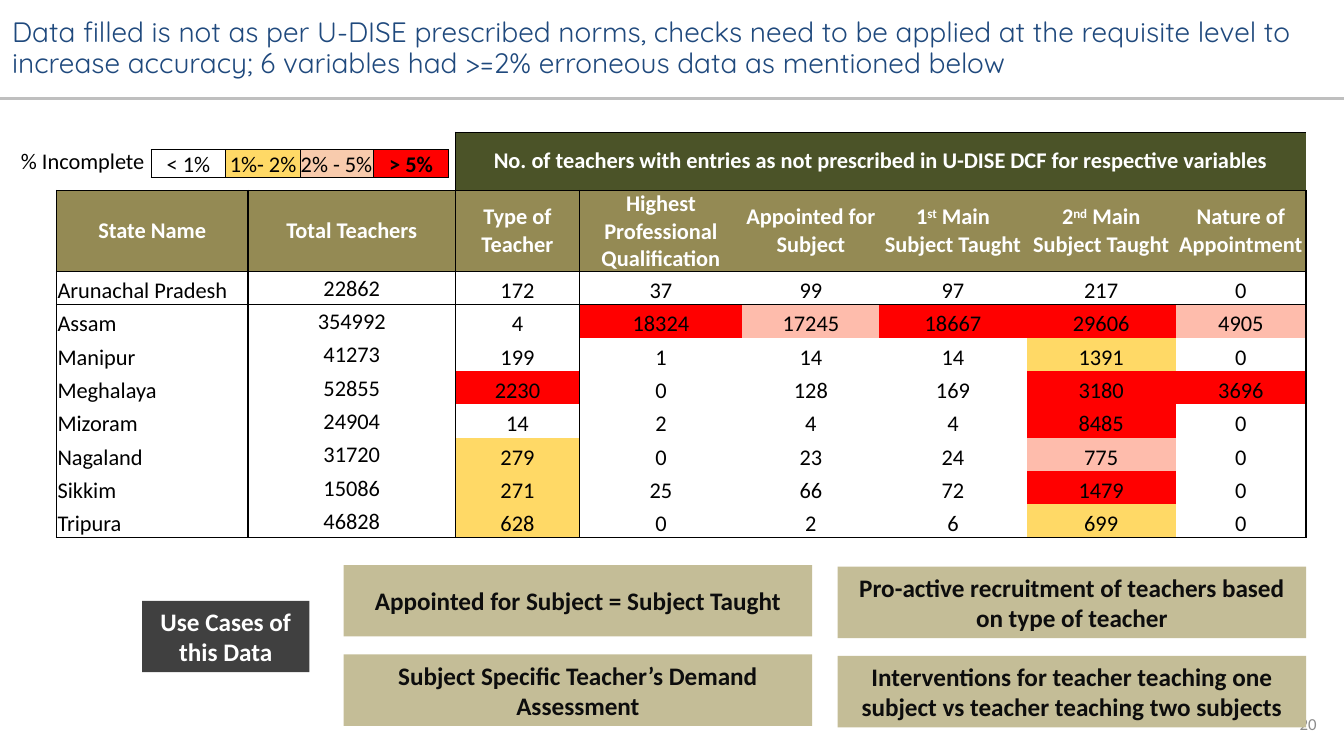
from dataclasses import dataclass

from lxml import etree
from pptx import Presentation
from pptx.dml.color import RGBColor
from pptx.enum.shapes import MSO_CONNECTOR, MSO_SHAPE
from pptx.enum.text import MSO_ANCHOR, MSO_AUTO_SIZE, PP_ALIGN
from pptx.oxml import parse_xml
from pptx.oxml.ns import nsdecls, qn
from pptx.util import Cm, Pt

LEFT, CENTER, RIGHT = PP_ALIGN.LEFT, PP_ALIGN.CENTER, PP_ALIGN.RIGHT
MIDDLE, BOTTOM, TOP = MSO_ANCHOR.MIDDLE, MSO_ANCHOR.BOTTOM, MSO_ANCHOR.TOP
NO_GRID_STYLE = "{2D5ABB26-0587-4C30-8999-92F81FD0307C}"

COLORS = {
    "title": "1F497D", "rule": "BFBFBF", "number": "8C8C8C",
    "black": "000000", "white": "FFFFFF", "ink": "0D0D0D",
    "banner": "4B5328", "header": "948A54", "tan": "C4BD97", "dark": "404040",
    "yellow": "FFD966", "pink": "FEBCAC", "peach": "F8CBAD", "red": "FF0000",
}
SHADES = {".": "white", "y": "yellow", "p": "pink", "r": "red"}


@dataclass
class StateRow:
    name: str
    total: int
    errors: tuple[int, ...]
    shades: str = "......"


@dataclass
class Legend:
    left: float
    entries: tuple[tuple[str, str, bool], ...]


@dataclass
class Box:
    text: str
    left: float
    top: float
    width: float = 11.81
    fill: str = "tan"
    color: str = "ink"


@dataclass
class Block:
    """Cell range with an outline, bounds included."""
    top: int
    bottom: int
    left: int
    right: int


BANNER = "No. of teachers with entries as not prescribed in U-DISE DCF for respective variables"
# A header is a list of runs; every second run is superscript
HEADERS = [
    ["State Name"], ["Total Teachers"], ["Type of Teacher"],
    ["Highest Professional Qualification"], ["Appointed for Subject"],
    ["1", "st", " Main Subject Taught"], ["2", "nd", " Main Subject Taught"],
    ["Nature of Appointment"],
]
STATES = [
    StateRow("Arunachal Pradesh", 22862, (172, 37, 99, 97, 217, 0)),
    StateRow("Assam", 354992, (4, 18324, 17245, 18667, 29606, 4905), ".rprrp"),
    StateRow("Manipur", 41273, (199, 1, 14, 14, 1391, 0), "....y."),
    StateRow("Meghalaya", 52855, (2230, 0, 128, 169, 3180, 3696), "r...rr"),
    StateRow("Mizoram", 24904, (14, 2, 4, 4, 8485, 0), "....r."),
    StateRow("Nagaland", 31720, (279, 0, 23, 24, 775, 0), "y...p."),
    StateRow("Sikkim", 15086, (271, 25, 66, 72, 1479, 0), "y...r."),
    StateRow("Tripura", 46828, (628, 0, 2, 6, 699, 0), "y...y."),
]
COL_WIDTHS = [4.83, 5.23, 3.12, 4.11, 3.45, 3.71, 3.76, 3.28]
ROW_HEIGHTS = [1.47, 1.96] + [0.84] * len(STATES)
BLOCKS = [Block(0, 0, 2, 7)] + [
    Block(top, bottom, left, right)
    for top, bottom in ((1, 1), (2, 9)) for left, right in ((0, 0), (1, 1), (2, 7))
]
LEGENDS = [
    Legend(7.54, (("2% - 5%", "peach", False), ("> 5%", "red", True))),
    Legend(3.81, (("< 1%", "white", False), ("1%- 2%", "yellow", False))),
]
BOXES = [
    Box("Appointed for Subject = Subject Taught", 8.66, 14.24),
    Box("Subject Specific Teacher’s Demand Assessment", 8.66, 16.49),
    Box("Use Cases of this Data", 3.58, 15.14, 4.22, "dark", "white"),
    Box("Pro-active recruitment of teachers based on type of teacher", 21.11, 14.28),
    Box("Interventions for teacher teaching one subject vs teacher teaching two subjects",
        21.11, 16.53),
]


def rgb(name: str) -> RGBColor:
    return RGBColor.from_string(COLORS[name])


def write(tf, runs: list[str], size: float, color: str = "black", bold: bool = False,
          align=CENTER, font: str = "Calibri"):
    p = tf.paragraphs[0]
    p.alignment = align
    for i, text in enumerate(runs):
        r = p.add_run()
        r.text = text
        if i % 2:
            r._r.get_or_add_rPr().set("baseline", "30000")
    p.font.name, p.font.size, p.font.bold = font, Pt(size), bold
    p.font.color.rgb = rgb(color)
    return p


def add_grid(s, left: float, top: float, widths: list[float], heights: list[float],
             blocks: list[Block]):
    """Add an unstyled table and outline its blocks."""
    frame = s.shapes.add_table(len(heights), len(widths), Cm(left), Cm(top),
                               Cm(sum(widths)), Cm(sum(heights)))
    table = frame.table
    table.first_row = table.horz_banding = False
    table._tbl.tblPr.find(qn("a:tableStyleId")).text = NO_GRID_STYLE
    for column, width in zip(table.columns, widths):
        column.width = Cm(width)
    for row, height in zip(table.rows, heights):
        row.height = Cm(height)
    for b in blocks:
        for row in range(b.top, b.bottom + 1):
            for col in range(b.left, b.right + 1):
                tcPr = table.cell(row, col)._tc.get_or_add_tcPr()
                sides = {"L": col == b.left, "R": col == b.right,
                         "T": row == b.top, "B": row == b.bottom}
                for side in (name for name, drawn in sides.items() if drawn):
                    tcPr.append(parse_xml(
                        f'<a:ln{side} {nsdecls("a")} w="12700"><a:solidFill>'
                        f'<a:srgbClr val="{COLORS["black"]}"/></a:solidFill></a:ln{side}>'))
    return table


def fill_cell(cell, runs: list[str], fill: str, color: str = "black", bold: bool = False,
              align=CENTER, anchor=MIDDLE, inset: float = 0.03) -> None:
    cell.margin_left = cell.margin_right = cell.margin_top = Cm(inset)
    cell.margin_bottom = 0
    cell.vertical_anchor = anchor
    cell.fill.solid()
    cell.fill.fore_color.rgb = rgb(fill)
    write(cell.text_frame, runs, 16, color, bold, align)


def add_label(s, text: str, left: float, top: float, width: float, height: float,
              size: float, color: str, align, anchor) -> None:
    tf = s.shapes.add_textbox(Cm(left), Cm(top), Cm(width), Cm(height)).text_frame
    tf.word_wrap = True
    tf.vertical_anchor = anchor
    write(tf, [text], size, color, align=align)


def add_box(s, box: Box) -> None:
    sp = s.shapes.add_shape(MSO_SHAPE.RECTANGLE, Cm(box.left), Cm(box.top),
                            Cm(box.width), Cm(1.8))
    sp.shadow.inherit = False
    sp.fill.solid()
    sp.fill.fore_color.rgb = rgb(box.fill)
    sp.line.fill.background()
    sp.text_frame.word_wrap = True
    sp.text_frame.vertical_anchor = MIDDLE
    write(sp.text_frame, [box.text], 18, box.color, True)


def main() -> None:
    prs = Presentation()
    prs.slide_width, prs.slide_height = Cm(33.87), Cm(19.05)
    s = prs.slides.add_slide(prs.slide_layouts[5])

    # Title and the double rule below it
    title = s.shapes.title
    title.left, title.top, title.width, title.height = Cm(0.05), Cm(0.03), Cm(33.81), Cm(2.41)
    title.fill.solid()
    title.fill.fore_color.rgb = rgb("white")
    tf = title.text_frame
    tf.auto_size = MSO_AUTO_SIZE.NONE
    tf.word_wrap = True
    tf.vertical_anchor = MIDDLE
    p = write(tf, ["Data filled is not as per U-DISE prescribed norms, checks need to be applied "
                   "at the requisite level to increase accuracy; 6 variables had >=2% erroneous "
                   "data as mentioned below"], 20, "title", align=LEFT, font="Quicksand")
    p.line_spacing = 0.9
    for y in (2.46, 2.49):
        rule = s.shapes.add_connector(MSO_CONNECTOR.STRAIGHT, 0, Cm(y), prs.slide_width, Cm(y))
        rule.line.color.rgb = rgb("rule")
        rule.line.width = Pt(1.5)
        etree.SubElement(rule._element.spPr, qn("a:effectLst"))

    # Slide number
    add_label(s, "20", 25.81, 17.73, 7.62, 1.02, 12, "number", RIGHT, MIDDLE)

    # Table of errors by state
    table = add_grid(s, 1.42, 3.33, COL_WIDTHS, ROW_HEIGHTS, BLOCKS)
    table.cell(0, 2).merge(table.cell(0, 7))
    fill_cell(table.cell(0, 2), [BANNER], "banner", "white", True, inset=0)
    for col, runs in enumerate(HEADERS):
        fill_cell(table.cell(1, col), runs, "header", "white", True, inset=0)
    for row, state in enumerate(STATES, start=2):
        fill_cell(table.cell(row, 0), [state.name], "white", align=LEFT, anchor=BOTTOM)
        fill_cell(table.cell(row, 1), [str(state.total)], "white")
        for col, (count, shade) in enumerate(zip(state.errors, state.shades), start=2):
            fill_cell(table.cell(row, col), [str(count)], SHADES[shade], anchor=BOTTOM)

    # Legend
    for legend in LEGENDS:
        key = add_grid(s, legend.left, 3.77, [1.88, 1.88], [0.71],
                       [Block(0, 0, col, col) for col in range(2)])
        for col, (text, fill, bold) in enumerate(legend.entries):
            fill_cell(key.cell(0, col), [text], fill, bold=bold)
    add_label(s, "% Incomplete", 0.28, 3.58, 3.68, 0.94, 16, "black", LEFT, TOP)

    # Use cases
    for box in BOXES:
        add_box(s, box)

    prs.save("out.pptx")


if __name__ == "__main__":
    main()
